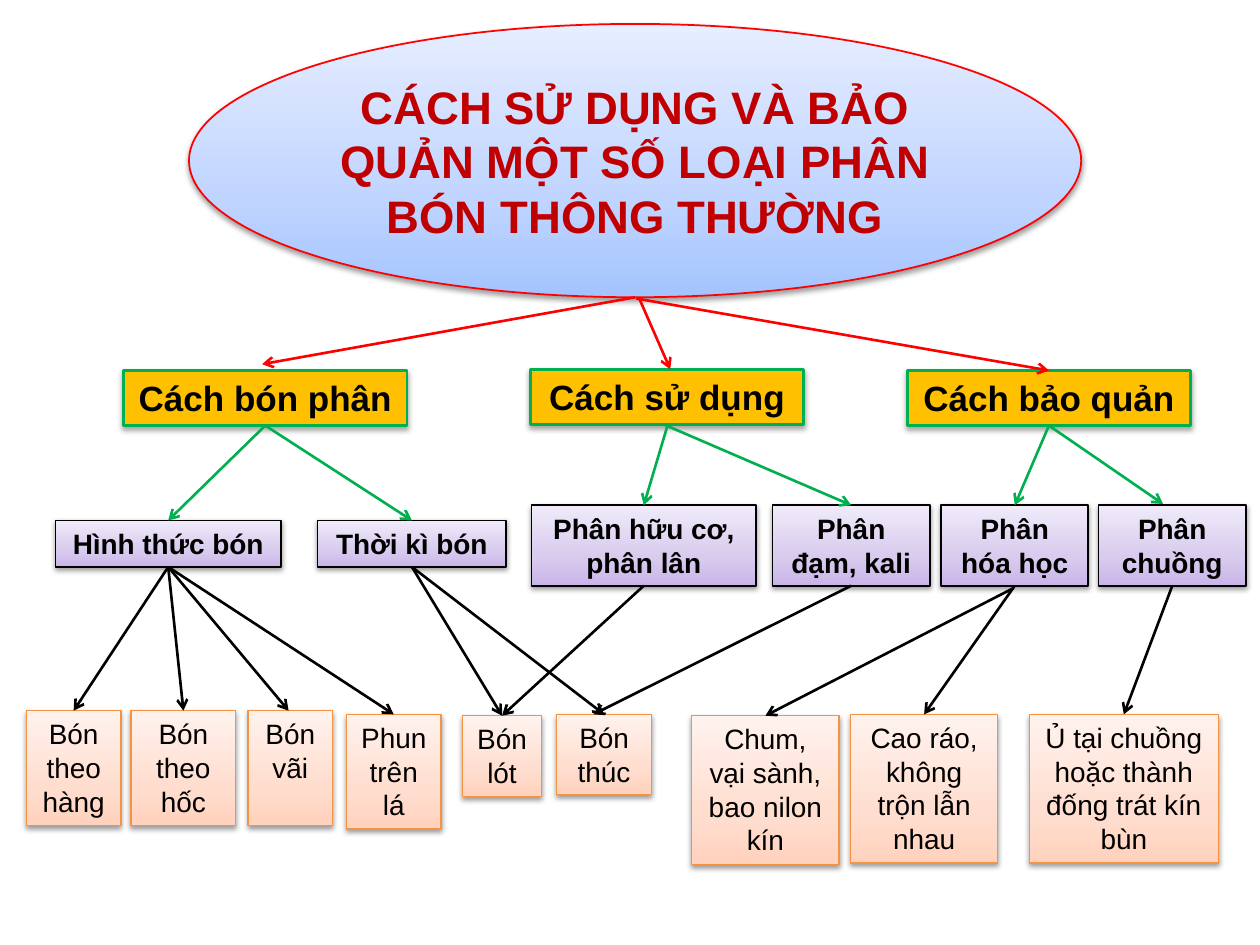
from copy import deepcopy
from lxml.etree import SubElement
from pptx import Presentation
from pptx.dml.color import RGBColor
from pptx.enum.shapes import MSO_CONNECTOR, MSO_SHAPE
from pptx.enum.text import MSO_ANCHOR, MSO_AUTO_SIZE, PP_ALIGN
from pptx.oxml.ns import qn
from pptx.util import Pt

BLUE = ("A4C4FF", "BFD4FF", "E6EEFF")
VIOLET = ("C9B5E8", "D8CBEE", "F0EAF9")
PEACH = ("FFD2BD", "FFDED0", "FFF2ED")
RED, GREEN, BLACK = "FF0000", "00B050", "000000"
TOP, BOTTOM = 0, 2


def color(text):
    return RGBColor.from_string(text)


def write(shape, text, face="Arial", size=16, ink=BLACK, bold=False,
          anchor=MSO_ANCHOR.TOP):
    frame = shape.text_frame
    frame.text = text
    frame.word_wrap = True
    frame.auto_size = MSO_AUTO_SIZE.NONE
    frame.vertical_anchor = anchor
    for para in frame.paragraphs:
        para.alignment = PP_ALIGN.CENTER
        font = para.font
        font.name, font.size, font.bold = face, Pt(size), bold
        font.color.rgb = color(ink)


class Chart:
    face = "Arial"
    stroke = 1.5
    blur = 3.1

    def __init__(self, slide):
        self.slide = slide

    def title(self, text, left, top, width, height, **style):
        head = self.slide.shapes.title
        head.left, head.top = Pt(left), Pt(top)
        head.width, head.height = Pt(width), Pt(height)
        write(head, text, face=self.face, **style)

    def box(self, left, top, width, height, fill, edge, weight,
            kind=MSO_SHAPE.RECTANGLE, text="", alpha=38, drop=1.6, **style):
        shape = self.slide.shapes.add_shape(
            kind, Pt(left), Pt(top), Pt(width), Pt(height))
        self.paint(shape, fill)
        shape.line.color.rgb = color(edge)
        shape.line.width = Pt(weight)
        self.shade(shape, alpha, drop)
        if text:
            write(shape, text, face=self.face, **style)
        return shape

    def paint(self, shape, fill):
        if isinstance(fill, str):
            shape.fill.solid()
            shape.fill.fore_color.rgb = color(fill)
            return
        shape.fill.gradient()
        shape.fill.gradient_angle = 90
        stops = shape._element.spPr.find(".//" + qn("a:gsLst"))
        stops.insert(1, deepcopy(stops[0]))
        for stop, tone, place in zip(shape.fill.gradient_stops, fill, (0, 0.35, 1)):
            stop.color.rgb = color(tone)
            stop.position = place

    def shade(self, shape, alpha, drop):
        shape.shadow.inherit = False
        effect = shape._element.spPr.find(qn("a:effectLst"))
        outer = SubElement(effect, qn("a:outerShdw"), blurRad=str(int(Pt(self.blur))),
                           dist=str(int(Pt(drop))), dir="5400000", rotWithShape="0")
        tone = SubElement(outer, qn("a:srgbClr"), val=BLACK)
        SubElement(tone, qn("a:alpha"), val=str(alpha * 1000))

    def arrow(self, source, target, ink, start=None, end=None):
        ends = [Pt(n) for n in (start or (0, 0)) + (end or (0, 0))]
        line = self.slide.shapes.add_connector(MSO_CONNECTOR.STRAIGHT, *ends)
        if not start:
            line.begin_connect(source, BOTTOM)
        if not end:
            line.end_connect(target, TOP)
        line.line.color.rgb = color(ink)
        line.line.width = Pt(self.stroke)
        edge = line._element.spPr.find(qn("a:ln"))
        SubElement(edge, qn("a:tailEnd"), type="arrow")
        SubElement(line._element.spPr, qn("a:effectLst"))


TOPICS = {
    "Cách bón phân": (70.6, 211.7, 162),
    "Cách sử dụng": (303.1, 211, 156.2),
    "Cách bảo quản": (518.4, 211.7, 162),
}
GROUPS = {
    "Hình thức bón": (31.7, 297.4, 128.9, 26.6),
    "Thời kì bón": (181.4, 297.4, 108, 26.6),
    "Phân hữu cơ, phân lân": (303.8, 288.7, 128.2, 46),
    "Phân đạm, kali": (441.4, 288.7, 90, 46),
    "Phân hóa học": (537.8, 288.7, 84.2, 46),
    "Phân chuồng": (627.8, 288.7, 84.2, 46),
}
LEAVES = {
    "Bón theo hàng": (15.1, 406.1, 54, 65.5),
    "Bón theo hốc": (74.9, 406.1, 59.8, 65.5),
    "Bón vãi": (141.8, 406.1, 48.2, 65.5),
    "Phun trên lá": (198, 408.2, 54, 65.5),
    "Bón lót": (264.2, 409, 45.4, 46),
    "Bón thúc": (318.2, 408.2, 54, 46),
    "Chum, vại sành, bao nilon kín": (395.3, 409, 84.2, 85),
    "Cao ráo,\nkhông trộn lẫn nhau": (486, 408.2, 84.2, 85),
    "Ủ tại chuồng hoặc thành đống trát kín bùn": (588.2, 408.2, 108, 85),
}
TITLE_LINKS = [
    (0, {"start": (362.9, 169.9), "end": (149.8, 208.1)}),
    (1, {"start": (365, 169.9), "end": (383, 211)}),
    (2, {"start": (363.6, 170.6)}),
]
TOPIC_LINKS = [
    (0, 0, {}), (0, 1, {}), (1, 2, {"start": (381.6, 242.6)}),
    (1, 3, {"start": (379.4, 242.6)}), (2, 4, {}), (2, 5, {"end": (664.6, 288)}),
]
GROUP_LINKS = [
    (0, 0, {}), (0, 1, {}), (0, 2, {"end": (164.9, 406.1)}), (0, 3, {}),
    (1, 4, {}), (1, 5, {}), (2, 4, {}), (3, 5, {"end": (339.1, 408.2)}),
    (4, 6, {"start": (578.9, 336.2)}), (4, 7, {}), (5, 8, {}),
]


def main():
    deck = Presentation()
    deck.slide_width, deck.slide_height = Pt(720), Pt(540)
    chart = Chart(deck.slides.add_slide(deck.slide_layouts[5]))

    oval = chart.box(108, 13.7, 509.8, 156.2, BLUE, RED, 1, kind=MSO_SHAPE.OVAL)
    oval._element.addnext(chart.slide.shapes.title._element)
    chart.title("CÁCH SỬ DỤNG VÀ BẢO QUẢN MỘT SỐ LOẠI PHÂN BÓN THÔNG THƯỜNG",
                182.7, 36.6, 360.5, 110.4, size=26, ink="C00000", bold=True,
                anchor=MSO_ANCHOR.MIDDLE)

    topics = [chart.box(*spot, 31.5, "FFC000", GREEN, 1.5, text=text, alpha=35,
                        drop=1.8, size=20, bold=True)
              for text, spot in TOPICS.items()]
    groups = [chart.box(*spot, VIOLET, BLACK, 1, text=text, bold=True)
              for text, spot in GROUPS.items()]
    leaves = [chart.box(*spot, PEACH, "F69240", 0.75, text=text)
              for text, spot in LEAVES.items()]

    for target, ends in TITLE_LINKS:
        chart.arrow(oval, topics[target], RED, **ends)
    for source, target, ends in TOPIC_LINKS:
        chart.arrow(topics[source], groups[target], GREEN, **ends)
    for source, target, ends in GROUP_LINKS:
        chart.arrow(groups[source], leaves[target], BLACK, **ends)

    deck.save("out.pptx")


if __name__ == "__main__":
    main()
